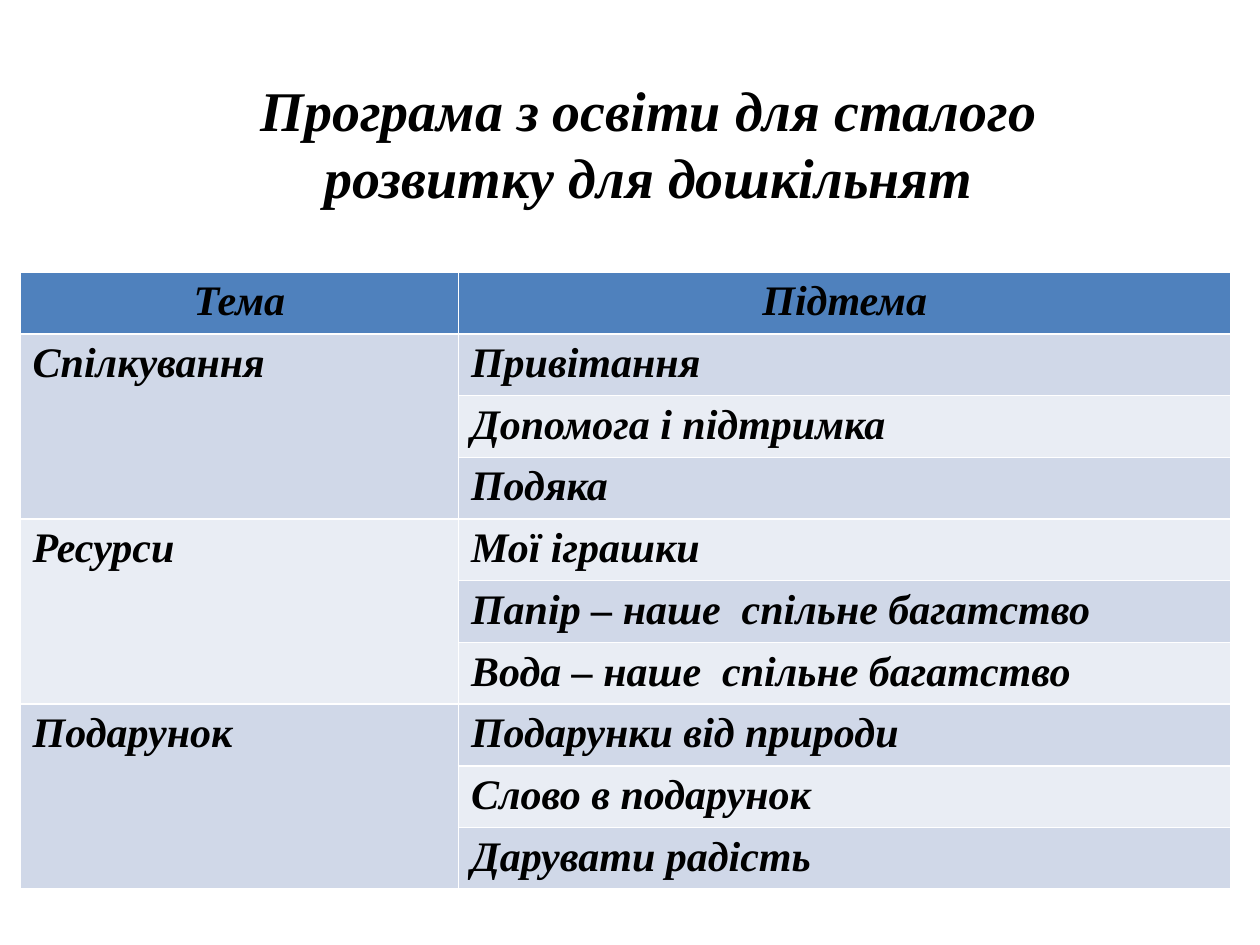
import pptx
import pptx.util
import pptx.dml.color
import pptx.enum.text
import pptx.oxml
import pptx.oxml.ns

W, H = 10, 7.5
FONT = "Times New Roman"
HEADER, BANDS = "4F81BD", ("D0D8E8", "E9EDF4")
CENTER = pptx.enum.text.PP_ALIGN.CENTER
LEFT = pptx.enum.text.PP_ALIGN.LEFT
TITLE = "Програма\u00a0з освіти для сталого розвитку для дошкільнят".replace("\u00a0", " ")
HEADINGS = ("Тема", "Підтема")
TOPICS = {
    "Спілкування": ("Привітання", "Допомога і підтримка", "Подяка"),
    "Ресурси": ("Мої іграшки", "Папір – наше  спільне багатство", "Вода – наше  спільне багатство"),
    "Подарунок": ("Подарунки від природи", "Слово в подарунок", "Дарувати радість"),
}


def color(value):
    return pptx.dml.color.RGBColor.from_string(value)


def inches(box):
    return [pptx.util.Inches(v) for v in box]


def add_text(tf, text, size, align):
    p = tf.paragraphs[0]
    p.alignment = align
    r = p.add_run()
    r.text = text
    r.font.name = FONT
    r.font.size = pptx.util.Pt(size)
    r.font.bold = r.font.italic = True
    r.font.color.rgb = color("000000")


def set_borders(cell, value, width):
    tcPr = cell._tc.get_or_add_tcPr()
    ns = pptx.oxml.ns.nsdecls("a")
    for i, side in enumerate(("lnL", "lnR", "lnT", "lnB")):
        tcPr.insert(i, pptx.oxml.parse_xml(
            f'<a:{side} {ns} w="{pptx.util.Pt(width)}"><a:solidFill>'
            f'<a:srgbClr val="{value}"/></a:solidFill></a:{side}>'))


def fill_cell(cell, text, fill, align=LEFT):
    cell.fill.solid()
    cell.fill.fore_color.rgb = color(fill)
    set_borders(cell, "FFFFFF", 1)
    if text:
        add_text(cell.text_frame, text, 24, align)


def add_title(s, box):
    tf = s.shapes.add_textbox(*inches(box)).text_frame
    tf.word_wrap = True
    tf.auto_size = pptx.enum.text.MSO_AUTO_SIZE.SHAPE_TO_FIT_TEXT
    add_text(tf, TITLE, 32, CENTER)


def add_topics(s, box, shares):
    rows = 1 + sum(len(subtopics) for subtopics in TOPICS.values())
    table = s.shapes.add_table(rows, len(shares), *inches(box)).table
    for column, share in zip(table.columns, shares):
        column.width = pptx.util.Inches(box[2] * share)
    for row in table.rows:
        row.height = pptx.util.Inches(box[3] / rows)
    for col, heading in enumerate(HEADINGS):
        fill_cell(table.cell(0, col), heading, HEADER, CENTER)
    row = 1
    for topic, subtopics in TOPICS.items():
        first = row
        for subtopic in subtopics:
            fill = BANDS[(row - 1) % 2]
            fill_cell(table.cell(row, 0), topic if row == first else "", BANDS[(first - 1) % 2])
            fill_cell(table.cell(row, 1), subtopic, fill)
            row += 1
        table.cell(first, 0).merge(table.cell(row - 1, 0))


def main():
    prs = pptx.Presentation()
    prs.slide_width, prs.slide_height = inches((W, H))
    s = prs.slides.add_slide(prs.slide_layouts[6])
    add_topics(s, (0.16, 2.16, 9.61, 4.9), (0.362, 0.638))
    add_title(s, (1.48, 0.55, 7.34, 1.18))
    prs.save("out.pptx")


if __name__ == "__main__":
    main()
